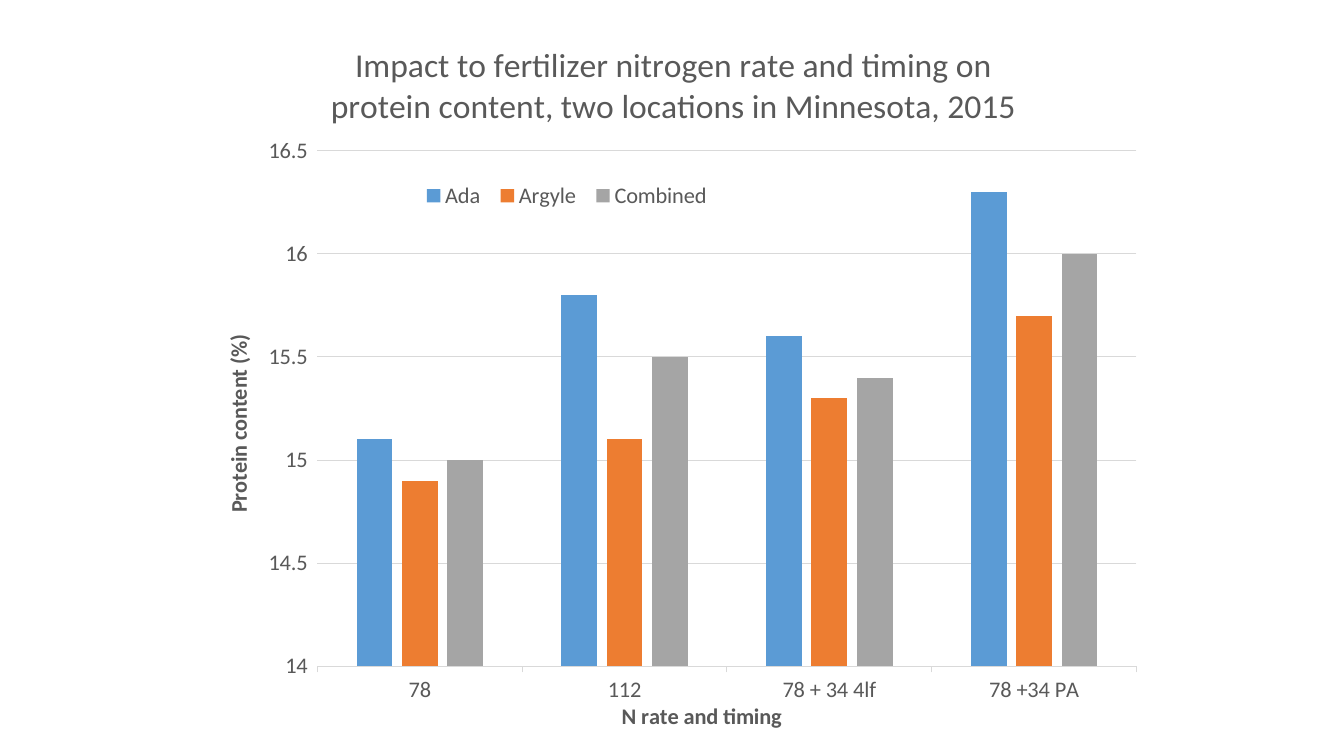
from dataclasses import dataclass

from lxml.etree import SubElement
from pptx import Presentation
from pptx.chart.data import CategoryChartData
from pptx.dml.color import RGBColor
from pptx.enum.chart import XL_CHART_TYPE, XL_LEGEND_POSITION, XL_TICK_MARK
from pptx.oxml.ns import qn
from pptx.util import Emu, Pt

SCALE = 914400 / 100.8


@dataclass(frozen=True)
class Theme:
    font: str = "Calibri"
    text: str = "595959"
    rule: str = "D9D9D9"
    series: tuple = ("5B9BD5", "ED7D31", "A5A5A5")
    title_size: int = 24
    label_size: int = 16
    rule_width: float = 0.75


def px(n):
    return Emu(round(n * SCALE))


def style_font(font, theme, size, bold=False):
    font.name = theme.font
    font.size = Pt(size)
    font.bold = bold
    font.color.rgb = RGBColor.from_string(theme.text)


def write(tf, text, *, theme, size, bold=False, rotation=None):
    r = tf.paragraphs[0].add_run()
    r.text = text
    style_font(r.font, theme, size, bold)
    if rotation is not None:
        body = tf._txBody.find(qn("a:bodyPr"))
        body.set("rot", str(rotation * 60000))
        body.set("vert", "horz")


def place(element, index, **fractions):
    for old in element.findall(qn("c:layout")):
        element.remove(old)
    layout = SubElement(element, qn("c:layout"))
    element.insert(index, layout)
    manual = SubElement(layout, qn("c:manualLayout"))
    if element.tag == qn("c:plotArea"):
        SubElement(manual, qn("c:layoutTarget")).set("val", "inner")
    for axis in "xy":
        SubElement(manual, qn(f"c:{axis}Mode")).set("val", "edge")
    for name, value in fractions.items():
        SubElement(manual, qn(f"c:{name}")).set("val", str(value))


class Deck:
    """Holds the theme and the current slide and adds elements to it."""

    def __init__(self, width, height, theme):
        self.theme = theme
        self.prs = Presentation()
        self.prs.slide_width, self.prs.slide_height = px(width), px(height)
        self.s = self.prs.slides.add_slide(self.prs.slide_layouts[6])

    def rule(self, line):
        line.color.rgb = RGBColor.from_string(self.theme.rule)
        line.width = Pt(self.theme.rule_width)

    def columns(self, x, y, w, h, categories, series, title):
        data = CategoryChartData(number_format="0.0")
        data.categories = categories
        for name, values in series.items():
            data.add_series(name, values)
        frame = self.s.shapes.add_chart(
            XL_CHART_TYPE.COLUMN_CLUSTERED, px(x), px(y), px(w), px(h), data)
        chart = frame.chart
        style_font(chart.font, self.theme, self.theme.label_size)
        chart.has_title = True
        write(chart.chart_title.text_frame, title,
              theme=self.theme, size=self.theme.title_size)
        plot = chart.plots[0]
        plot.vary_by_categories = False
        plot.gap_width, plot.overlap = 219, -27
        for ser, color in zip(plot.series, self.theme.series):
            ser.format.fill.solid()
            ser.format.fill.fore_color.rgb = RGBColor.from_string(color)
        area = chart._chartSpace.find(f".//{qn('c:plotArea')}")
        place(area, 0, x=0.116, y=0.187, w=0.884, h=0.721)
        return chart

    def axis(self, axis, title, x, y, rotation=0):
        style_font(axis.tick_labels.font, self.theme, self.theme.label_size)
        axis.major_tick_mark = XL_TICK_MARK.OUTSIDE
        write(axis.axis_title.text_frame, title, theme=self.theme,
              size=self.theme.label_size, bold=True, rotation=rotation)
        place(axis.axis_title._element, 1, x=x, y=y)

    def legend(self, chart, **fractions):
        chart.has_legend = True
        legend = chart.legend
        legend.position = XL_LEGEND_POSITION.TOP
        legend.include_in_layout = False
        style_font(legend.font, self.theme, self.theme.label_size)
        place(legend._element, 1, **fractions)


def main():
    deck = Deck(1344, 756, Theme())
    chart = deck.columns(
        210, 17, 927, 720,
        ["78", "112", "78 + 34 4lf", "78 +34 PA"],
        {"Ada": (15.1, 15.8, 15.6, 16.3),
         "Argyle": (14.9, 15.1, 15.3, 15.7),
         "Combined": (15, 15.5, 15.4, 16)},
        "Impact to fertilizer nitrogen rate and timing on protein content, "
        "two locations in Minnesota, 2015")

    rates, protein = chart.category_axis, chart.value_axis
    deck.axis(rates, "N rate and timing", 0.44, 0.95)
    deck.rule(rates.format.line)
    deck.axis(protein, "Protein content (%)", 0.01, 0.44, rotation=-90)
    protein.format.line.fill.background()
    protein.minimum_scale, protein.maximum_scale = 14, 16.5
    protein.major_unit = 0.5
    protein.tick_labels.number_format = "General"
    protein.tick_labels.number_format_is_linked = False
    protein.has_major_gridlines = True
    deck.rule(protein.major_gridlines.format.line)

    deck.legend(chart, x=0.22, y=0.22, w=0.33, h=0.06)
    deck.prs.save("out.pptx")


if __name__ == "__main__":
    main()
